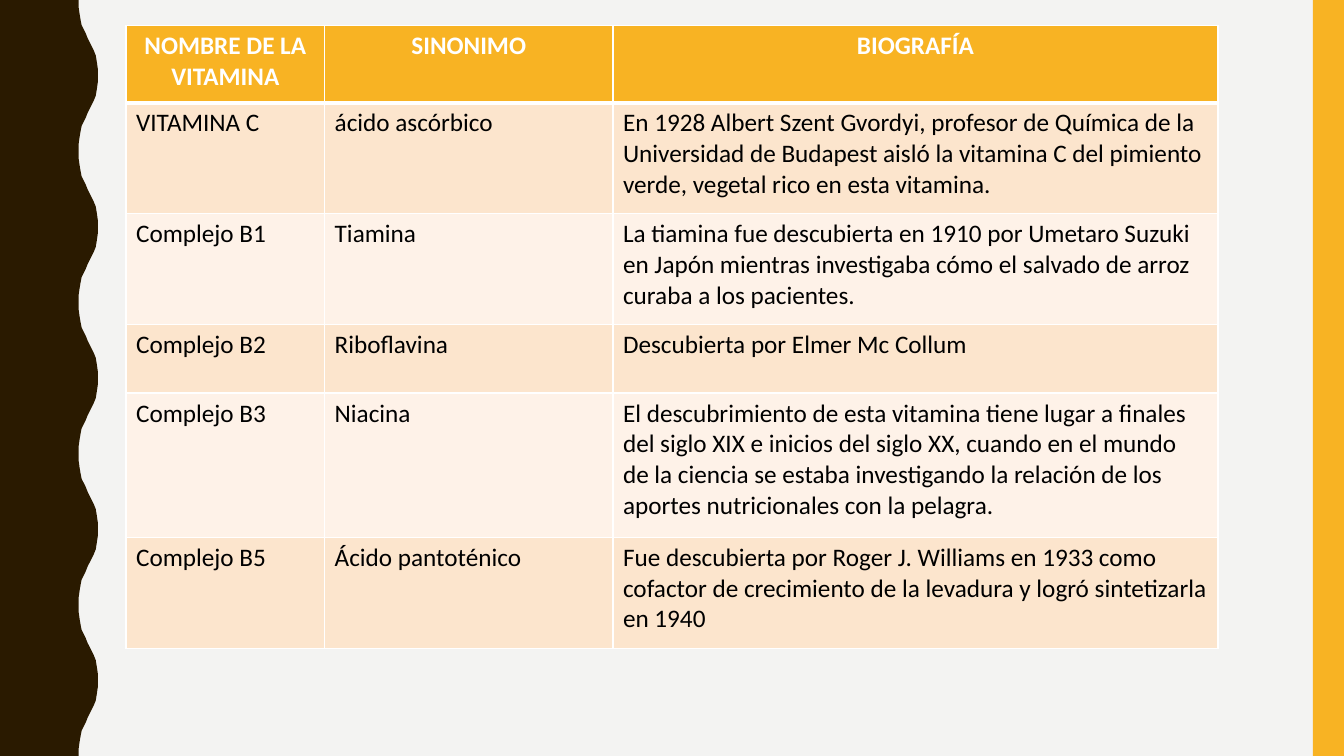
import pptx
import pptx.util
import pptx.dml.color
import pptx.enum.shapes
import pptx.enum.text
import pptx.oxml

PX = 9144
HUES = {
    "back": "F3F3F2", "wave": "2A1A00", "gold": "F8B323",
    "dark": "FCE5CD", "pale": "FEF2E8", "white": "FFFFFF", "black": "000000",
}
COLS = [197, 286, 600]
ROWS = [77, 110, 110, 68, 143, 110]
BEND = [(78, 0), (78, 7), (79, 14), (80, 20), (81, 25), (83, 29), (85, 33), (87, 38),
        (89, 42), (91, 46), (93, 50), (95, 55), (96, 61), (97, 68), (97, 75)]
CELLS = [
    ("NOMBRE DE LA VITAMINA", "SINONIMO", "BIOGRAFÍA"),
    ("VITAMINA C", "ácido ascórbico",
     "En 1928 Albert Szent Gvordyi, profesor de Química de la Universidad de Budapest "
     "aisló la vitamina C del pimiento verde, vegetal rico en esta vitamina."),
    ("Complejo B1", "Tiamina",
     "La tiamina fue descubierta en 1910 por Umetaro Suzuki en Japón mientras "
     "investigaba cómo el salvado de arroz curaba a los pacientes."),
    ("Complejo B2", "Riboflavina", "Descubierta por Elmer Mc Collum"),
    ("Complejo B3", "Niacina",
     "El descubrimiento de esta vitamina tiene lugar a finales del siglo XIX e inicios "
     "del siglo XX, cuando en el mundo de la ciencia se estaba investigando la relación "
     "de los aportes nutricionales con la pelagra."),
    ("Complejo B5", "Ácido pantoténico",
     "Fue descubierta por Roger J. Williams en 1933 como cofactor de crecimiento de la "
     "levadura y logró sintetizarla en 1940"),
]


def tint(fill, hue):
    """Give a fill one solid colour."""
    fill.solid()
    fill.fore_color.rgb = pptx.dml.color.RGBColor.from_string(HUES[hue])


def plain(shape, hue):
    """Fill a shape and drop its line and shadow."""
    tint(shape.fill, hue)
    shape.line.fill.background()
    shape.shadow.inherit = False


def write(frame, text, size=18, hue="black", bold=False, align="LEFT"):
    """Put formatted text in a frame."""
    para = frame.paragraphs[0]
    para.alignment = getattr(pptx.enum.text.PP_ALIGN, align)
    run = para.add_run()
    run.text = text
    run.font.name = "Calibri"
    run.font.size = pptx.util.Pt(size)
    run.font.bold = bold
    tint(run.font.fill, hue)


def edge(cell, side, width):
    """Draw one white border of a cell."""
    cell.fill.background()
    line = pptx.oxml.parse_xml(
        f'<a:{side} xmlns:a="http://schemas.openxmlformats.org/drawingml/2006/main" '
        f'w="{pptx.util.Pt(width)}"><a:solidFill><a:srgbClr val="{HUES["white"]}"/>'
        f'</a:solidFill></a:{side}>')
    props = cell.fill._xPr
    props.insert(len(props) - 1, line)


def wave(slide, left, top, height):
    """Draw the dark band with its wavy right edge."""
    half = BEND[-1][1]
    cycle = BEND + [(x, 2 * half - y) for x, y in BEND[-2::-1]]
    rim = [(left + x, top + y + start)
           for start in range(0, height, 2 * half) for x, y in cycle]
    path = slide.shapes.build_freeform(left, top, scale=PX)
    path.add_line_segments(rim + [(left, top + height)], close=True)
    plain(path.convert_to_shape(), "wave")


def strip(slide, *box):
    """Draw the gold strip."""
    kind = pptx.enum.shapes.MSO_SHAPE.RECTANGLE
    plain(slide.shapes.add_shape(kind, *(v * PX for v in box)), "gold")


def grid(slide, left, top):
    """Place the vitamin table."""
    box = [v * PX for v in (left, top, sum(COLS), sum(ROWS))]
    table = slide.shapes.add_table(len(ROWS), len(COLS), *box).table
    for col, width in zip(table.columns, COLS):
        col.width = width * PX
    for row, height in zip(table.rows, ROWS):
        row.height = height * PX
    for r, texts in enumerate(CELLS):
        head = r == 0
        sides = {"lnL": 1, "lnR": 1, "lnT": 3 if r == 1 else 1, "lnB": 3 if head else 1}
        style = {"hue": "white", "bold": True, "align": "CENTER"} if head else {}
        for c, text in enumerate(texts):
            cell = table.cell(r, c)
            for side, width in sides.items():
                edge(cell, side, width)
            tint(cell.fill, "gold" if head else "dark" if r % 2 else "pale")
            write(cell.text_frame, text, **style)


def main():
    """Build and save the slide."""
    deck = pptx.Presentation()
    deck.slide_width, deck.slide_height = 1333 * PX, 750 * PX
    slide = deck.slides.add_slide(deck.slide_layouts[6])
    tint(slide.background.fill, "back")
    wave(slide, 0, 0, 750)
    strip(slide, 1302, 0, 31, 750)
    grid(slide, 125, 25)
    deck.save("out.pptx")


if __name__ == "__main__":
    main()
